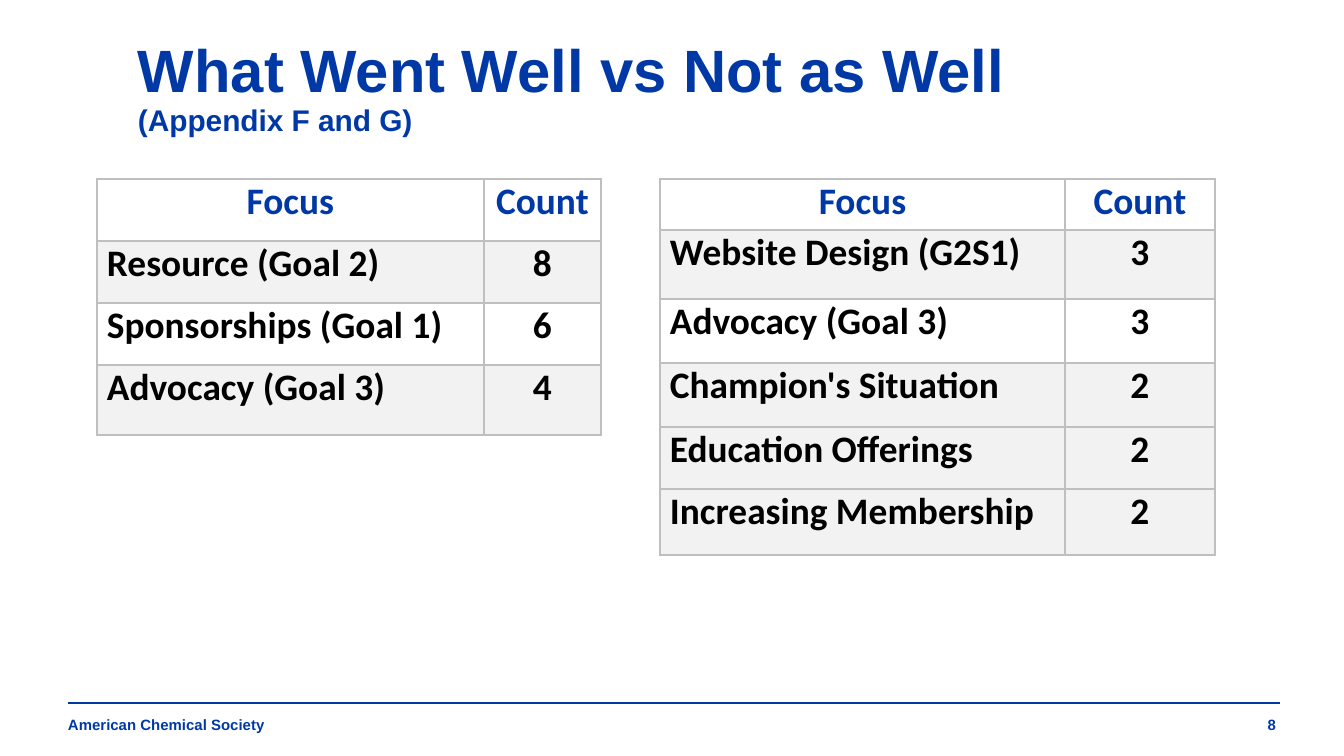
"""Build the slide comparing what went well with what did not."""
import pptx
import pptx.dml.color
import pptx.enum.text
import pptx.oxml
import pptx.oxml.ns
import pptx.util

RGBColor = pptx.dml.color.RGBColor
ALIGN = pptx.enum.text.PP_ALIGN
ANCHOR = pptx.enum.text.MSO_ANCHOR

BLUE = RGBColor(0x00, 0x39, 0xA6)
BLACK = RGBColor(0x00, 0x00, 0x00)
BAND = RGBColor(0xF2, 0xF2, 0xF2)
BORDER = RGBColor(0xBF, 0xBF, 0xBF)

TITLE = [("What Went Well vs Not as Well", 32), ("(Appendix F and G)", 16)]
HEADER = ("Focus", "Count")
TABLES = [
    {
        "left": 97,
        "cols": (387, 117),
        "heights": (62, 62, 62, 70),
        "rows": [("Resource (Goal 2)", 8), ("Sponsorships (Goal 1)", 6),
                 ("Advocacy (Goal 3)", 4)],
        "shaded": (1, 3),
    },
    {
        "left": 660,
        "cols": (405, 150),
        "heights": (51, 69, 64, 64, 62, 66),
        "rows": [("Website Design (G2S1)", 3), ("Advocacy (Goal 3)", 3),
                 ("Champion's Situation", 2), ("Education Offerings", 2),
                 ("Increasing Membership", 2)],
        "shaded": (1, 3, 4, 5),
    },
]
FOOTERS = [("American Chemical Society", 68, 426, ALIGN.LEFT),
           ("8", 1242, 34, ALIGN.RIGHT)]
TABLE_TOP = 179
CELL_INSET = 10
RULE = (68, 1280, 703)
FOOTER_TOP, FOOTER_HEIGHT = 716, 19


def px(n):
    return round(n * 914400 / 134.4)


def format_runs(p, size, name, color):
    for r in p.runs:
        r.font.size = pptx.util.Pt(size)
        r.font.name = name
        r.font.bold = True
        r.font.color.rgb = color


def set_margins(obj, left, right):
    obj.margin_left, obj.margin_right = px(left), px(right)
    obj.margin_top = obj.margin_bottom = 0


def set_borders(cell):
    tc_pr = cell._tc.get_or_add_tcPr()
    for i, side in enumerate(("lnL", "lnR", "lnT", "lnB")):
        tc_pr.insert(i, pptx.oxml.parse_xml(
            f'<a:{side} {pptx.oxml.ns.nsdecls("a")} w="12700"><a:solidFill>'
            f'<a:srgbClr val="{BORDER}"/></a:solidFill></a:{side}>'))


def add_title(s):
    sp = s.shapes.title
    sp.left, sp.top, sp.width, sp.height = px(71), px(35), px(1058), px(103)
    tf = sp.text_frame
    tf.text = "\n".join(text for text, size in TITLE)
    tf.word_wrap = True
    tf.auto_size = pptx.enum.text.MSO_AUTO_SIZE.NONE
    tf.vertical_anchor = ANCHOR.BOTTOM
    set_margins(tf, 67, 0)
    for p, (text, size) in zip(tf.paragraphs, TITLE):
        p.alignment = ALIGN.LEFT
        p.line_spacing = 0.9
        format_runs(p, size, "Arial", BLUE)


def add_focus_table(s, data):
    rows = [HEADER] + data["rows"]
    tbl = s.shapes.add_table(
        len(rows), len(HEADER), px(data["left"]), px(TABLE_TOP),
        px(sum(data["cols"])), px(sum(data["heights"]))).table
    tbl.first_row = tbl.horz_banding = False
    for col, width in zip(tbl.columns, data["cols"]):
        col.width = px(width)
    for i, (values, height) in enumerate(zip(rows, data["heights"])):
        tbl.rows[i].height = px(height)
        for j, value in enumerate(values):
            cell = tbl.cell(i, j)
            cell.text = str(value)
            set_margins(cell, CELL_INSET, CELL_INSET)
            p = cell.text_frame.paragraphs[0]
            p.alignment = ALIGN.LEFT if i and j == 0 else ALIGN.CENTER
            format_runs(p, 20, "Calibri", BLACK if i else BLUE)
            if i in data["shaded"]:
                cell.fill.solid()
                cell.fill.fore_color.rgb = BAND
            else:
                cell.fill.background()
            set_borders(cell)


def add_footer(s):
    left, right, y = RULE
    rule = s.shapes.add_connector(
        pptx.enum.shapes.MSO_CONNECTOR.STRAIGHT,
        px(left), px(y), px(right), px(y))
    rule.line.color.rgb = BLUE
    rule.line.width = pptx.util.Pt(0.75)
    rule._element.spPr.append(pptx.oxml.parse_xml(
        f'<a:effectLst {pptx.oxml.ns.nsdecls("a")}/>'))
    for text, x, width, align in FOOTERS:
        tf = s.shapes.add_textbox(
            px(x), px(FOOTER_TOP), px(width), px(FOOTER_HEIGHT)).text_frame
        tf.text = text
        tf.word_wrap = True
        set_margins(tf, 0, 0)
        p = tf.paragraphs[0]
        p.alignment = align
        format_runs(p, 8, "Arial", BLUE)


def main():
    prs = pptx.Presentation()
    prs.slide_width, prs.slide_height = px(1344), px(756)
    s = prs.slides.add_slide(prs.slide_layouts[5])
    add_footer(s)
    add_title(s)
    for data in TABLES:
        add_focus_table(s, data)
    prs.save("out.pptx")


if __name__ == "__main__":
    main()
